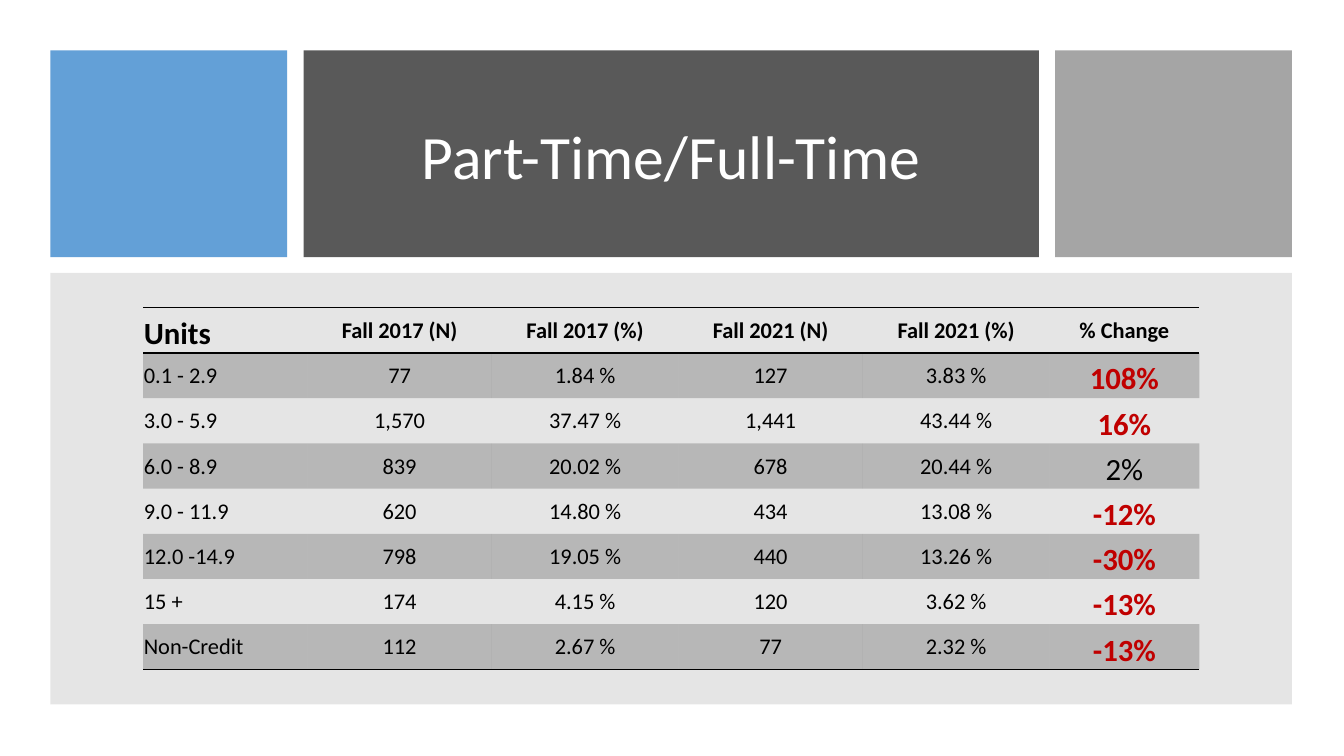
from lxml import etree
from pptx import Presentation
from pptx import util as u
from pptx.dml.color import RGBColor
from pptx.enum import shapes, text
from pptx.oxml import ns

FONT = "Calibri"
BLACK = RGBColor(0x00, 0x00, 0x00)
WHITE = RGBColor(0xFF, 0xFF, 0xFF)
BLUE = RGBColor(0x5B, 0x9B, 0xD5)
CHARCOAL = RGBColor(0x59, 0x59, 0x59)
SILVER = RGBColor(0xA5, 0xA5, 0xA5)
GREY = RGBColor(0x80, 0x80, 0x80)
RED = RGBColor(0xC0, 0x00, 0x00)

PLAIN_TABLE_STYLE = "{2D5ABB26-0587-4C30-8999-92F81FD0307C}"
COLUMN_WIDTHS = [4.14, 4.65, 4.7, 4.65, 4.7, 3.78]
ROW_HEIGHT = 1.14
ROWS = [
    ["Units", "Fall 2017 (N)", "Fall 2017 (%)", "Fall 2021 (N)", "Fall 2021 (%)", "% Change"],
    ["0.1 - 2.9", "77", "1.84 %", "127", "3.83 %", "108%"],
    ["3.0 - 5.9", "1,570", "37.47 %", "1,441", "43.44 %", "16%"],
    ["6.0 - 8.9", "839", "20.02 %", "678", "20.44 %", "2%"],
    ["9.0 - 11.9", "620", "14.80 %", "434", "13.08 %", "-12%"],
    ["12.0 -14.9", "798", "19.05 %", "440", "13.26 %", "-30%"],
    ["15 +", "174", "4.15 %", "120", "3.62 %", "-13%"],
    ["Non-Credit", "112", "2.67 %", "77", "2.32 %", "-13%"],
]


def set_opacity(fill_parent, percent):
    color = fill_parent.find(ns.qn("a:solidFill")).find(ns.qn("a:srgbClr"))
    etree.SubElement(color, ns.qn("a:alpha"), val=str(percent * 1000))


def add_block(slide, left, top, width, height, color, opacity=100):
    block = slide.shapes.add_shape(
        shapes.MSO_SHAPE.RECTANGLE, u.Cm(left), u.Cm(top), u.Cm(width), u.Cm(height))
    block.shadow.inherit = False
    block.fill.solid()
    block.fill.fore_color.rgb = color
    block.line.fill.background()
    if opacity < 100:
        set_opacity(block.element.spPr, opacity)


def format_runs(paragraph, size, color, bold=False):
    for run in paragraph.runs:
        run.font.name = FONT
        run.font.size = u.Pt(size)
        run.font.bold = bold
        run.font.color.rgb = color


def place_title(slide, left, top, width, height):
    title = slide.shapes.title
    title.left, title.top = u.Cm(left + 0.81), u.Cm(top + 0.76)
    title.width, title.height = u.Cm(width - 1.62), u.Cm(height - 1.25)
    frame = title.text_frame
    frame.text = "Part-Time/Full-Time"
    frame.word_wrap = True
    frame.vertical_anchor = text.MSO_ANCHOR.MIDDLE
    paragraph = frame.paragraphs[0]
    paragraph.alignment = text.PP_ALIGN.CENTER
    paragraph.line_spacing = 0.9
    format_runs(paragraph, 44, WHITE)
    # Bring the title in front of its block
    slide.shapes.element.append(title.element)


def add_header(slide, left, top, width, height):
    side, gap = 5.97, 0.41
    middle = width - 2 * (side + gap)
    middle_left = left + side + gap
    add_block(slide, left, top, side, height, BLUE, 95)
    add_block(slide, middle_left, top, middle, height, CHARCOAL)
    place_title(slide, middle_left, top, middle, height)
    add_block(slide, left + width - side, top, side, height, SILVER)


def add_borders(cell, tags):
    properties = cell._tc.get_or_add_tcPr()
    for index, tag in enumerate(tags):
        line = etree.Element(ns.qn(tag), w=str(u.Pt(1)))
        fill = etree.SubElement(line, ns.qn("a:solidFill"))
        etree.SubElement(fill, ns.qn("a:srgbClr"), val=str(BLACK))
        properties.insert(index, line)


def format_cell(cell, row, column, value):
    is_header = row == 0
    is_change = column == len(COLUMN_WIDTHS) - 1 and not is_header
    is_large = is_change or (is_header and column == 0)
    is_notable = is_change and abs(int(value.rstrip("%"))) >= 10

    # Text
    cell.text_frame.text = value
    cell.margin_left = cell.margin_right = cell.margin_top = u.Cm(0.02)
    cell.margin_bottom = 0
    cell.vertical_anchor = text.MSO_ANCHOR.BOTTOM if is_large else text.MSO_ANCHOR.MIDDLE
    paragraph = cell.text_frame.paragraphs[0]
    paragraph.alignment = text.PP_ALIGN.CENTER if column else text.PP_ALIGN.LEFT
    format_runs(paragraph, 22 if is_large else 16, RED if is_notable else BLACK,
                is_header or is_notable)

    # Banding and rules
    if row % 2:
        cell.fill.solid()
        cell.fill.fore_color.rgb = BLACK
        set_opacity(cell._tc.tcPr, 20)
    else:
        cell.fill.background()
    if is_header:
        add_borders(cell, ["a:lnT", "a:lnB"])
    elif row == len(ROWS) - 1:
        add_borders(cell, ["a:lnB"])


def add_units_table(slide, left, top, width, height):
    add_block(slide, left, top, width, height, GREY, 20)
    table_width = sum(COLUMN_WIDTHS)
    table_height = ROW_HEIGHT * len(ROWS)
    table = slide.shapes.add_table(
        len(ROWS), len(COLUMN_WIDTHS),
        u.Cm(left + (width - table_width) / 2), u.Cm(top + (height - table_height) / 2),
        u.Cm(table_width), u.Cm(table_height)).table
    table.horz_banding = False
    table._tbl.tblPr.find(ns.qn("a:tableStyleId")).text = PLAIN_TABLE_STYLE
    for column, column_width in zip(table.columns, COLUMN_WIDTHS):
        column.width = u.Cm(column_width)
    for row, values in enumerate(ROWS):
        table.rows[row].height = u.Cm(ROW_HEIGHT)
        for column, value in enumerate(values):
            format_cell(table.cell(row, column), row, column, value)


def main():
    presentation = Presentation()
    presentation.slide_width, presentation.slide_height = u.Cm(33.87), u.Cm(19.05)
    slide = presentation.slides.add_slide(presentation.slide_layouts[5])
    add_header(slide, 1.27, 1.27, 31.29, 5.21)
    add_units_table(slide, 1.27, 6.88, 31.29, 10.87)
    presentation.save("out.pptx")


if __name__ == "__main__":
    main()
